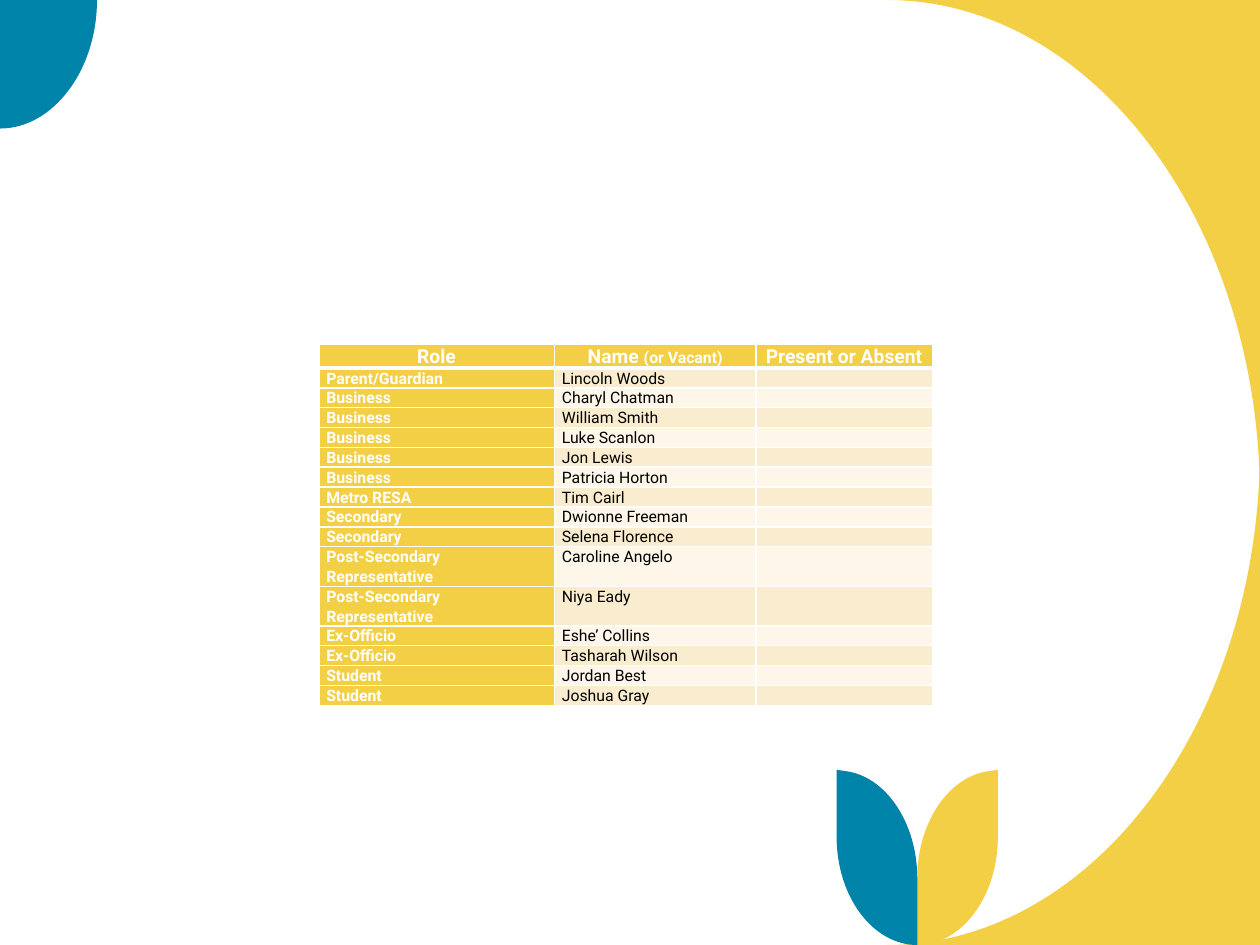
from lxml.etree import SubElement
from pptx import Presentation
from pptx.dml.color import RGBColor
from pptx.enum.text import MSO_ANCHOR as Anchor, PP_ALIGN as Align
from pptx.oxml import parse_xml
from pptx.oxml.ns import nsdecls, qn
from pptx.util import Inches, Pt

COLORS = {"gold": "F3CF45", "teal": "0083A9", "white": "FFFFFF",
          "black": "000000", "band_dark": "FAEDCF", "band_light": "FDF6E9"}
FONT = "Roboto"

# Content: header cells are lists of (text, size) runs
HEADERS = [[("Role", 11)], [("Name ", 11), ("(or Vacant)", 9)],
           [("Present or Absent", 11)]]
MEMBERS = [
    ("Parent/Guardian", "Lincoln Woods"),
    ("Business", "Charyl Chatman"),
    ("Business", "William Smith"),
    ("Business", "Luke Scanlon"),
    ("Business", "Jon Lewis"),
    ("Business", "Patricia Horton"),
    ("Metro RESA", "Tim Cairl"),
    ("Secondary", "Dwionne Freeman"),
    ("Secondary", "Selena Florence"),
    ("Post-Secondary Representative", "Caroline Angelo"),
    ("Post-Secondary Representative", "Niya Eady"),
    ("Ex-Officio", "Eshe’ Collins"),
    ("Ex-Officio", "Tasharah Wilson"),
    ("Student", "Jordan Best"),
    ("Student", "Joshua Gray"),
]
COLUMN_WIDTHS = [1.87, 1.6, 1.4]
HEADER_HEIGHT, ROW_HEIGHT = 0.18, 0.15

# Outlines: a pair is a line end, six numbers are a Bezier curve
TOP_SWEEP = [(10, 0), (7.04, 0), (8.67, 0, 10, 1.77, 10, 3.95)]
BOTTOM_SWEEP = [(10, 3.55), (10, 5.73, 8.67, 7.5, 7.04, 7.5), (10, 7.5)]
CORNER_LEAF = [(0, 0), (0.77, 0), (0.77, 0.56, 0.42, 1.02, 0, 1.02)]
LEAF_AXIS = 7.28
RIGHT_LEAF = [(7.92, 6.11), (7.92, 6.64),
              (7.92, 7.12, 7.63, 7.5, LEAF_AXIS, 7.5), (LEAF_AXIS, 6.97),
              (LEAF_AXIS, 6.53, 7.53, 6.16, 7.85, 6.12)]


def rgb(name):
    return RGBColor.from_string(COLORS[name])


def mirrored(outline, axis):
    return [tuple(2 * axis - v if i % 2 == 0 else v for i, v in enumerate(step))
            for step in outline]


def add_outline(shapes, outline, color):
    ends = [(Inches(step[-2]), Inches(step[-1])) for step in outline]
    builder = shapes.build_freeform(*ends[0])
    builder.add_line_segments(ends[1:], close=True)
    shape = builder.convert_to_shape()
    shape.shadow.inherit = False
    shape.fill.solid()
    shape.fill.fore_color.rgb = rgb(color)
    shape.line.fill.background()

    # Turn the straight segments of the curved steps into Bezier curves
    segments = list(shape._element.iter(qn("a:lnTo")))
    for segment, step in zip(segments, outline[1:]):
        if len(step) == 6:
            segment.tag = qn("a:cubicBezTo")
            controls = [(step[0], step[1]), (step[2], step[3])]
            for place, (x, y) in enumerate(controls):
                point = parse_xml(f'<a:pt {nsdecls("a")} x="{Inches(x) - shape.left}" '
                                  f'y="{Inches(y) - shape.top}"/>')
                segment.insert(place, point)


def write(paragraph, text, size=9, color="white", bold=True, align=Align.LEFT):
    paragraph.alignment = align
    paragraph.line_spacing = 1.07
    run = paragraph.add_run()
    run.text = text
    run.font.name = FONT
    run.font.size = Pt(size)
    run.font.bold = bold
    run.font.color.rgb = rgb(color)


def style_cell(cell, fill, anchor=Anchor.TOP, top=1, bottom=1):
    cell.margin_left = cell.margin_right = Inches(0.06)
    cell.margin_top = cell.margin_bottom = 0
    cell.vertical_anchor = anchor
    cell.fill.solid()
    cell.fill.fore_color.rgb = rgb(fill)
    borders = [("L", 1), ("R", 1), ("T", top), ("B", bottom)]
    for place, (side, width) in enumerate(borders):
        line = parse_xml(f'<a:ln{side} {nsdecls("a")} w="{Pt(width)}"><a:solidFill>'
                         f'<a:srgbClr val="{COLORS["white"]}"/>'
                         f'</a:solidFill></a:ln{side}>')
        cell._tc.get_or_add_tcPr().insert(place, line)


def keep_empty_cell_small(cell):
    end = cell.text_frame.paragraphs[0]._p.get_or_add_endParaRPr()
    end.set("sz", "900")
    SubElement(end, qn("a:latin"), typeface=FONT)


def add_roster(slide):
    height = HEADER_HEIGHT + ROW_HEIGHT * len(MEMBERS)
    roster = slide.shapes.add_table(
        len(MEMBERS) + 1, len(HEADERS), Inches(2.53), Inches(2.73),
        Inches(sum(COLUMN_WIDTHS)), Inches(height)).table
    for column, width in zip(roster.columns, COLUMN_WIDTHS):
        column.width = Inches(width)
    for index, row in enumerate(roster.rows):
        row.height = Inches(ROW_HEIGHT if index else HEADER_HEIGHT)

    # Header row
    for col, runs in enumerate(HEADERS):
        cell = roster.cell(0, col)
        style_cell(cell, "gold", anchor=Anchor.MIDDLE, bottom=3)
        for text, size in runs:
            write(cell.text_frame.paragraphs[0], text, size=size, align=Align.CENTER)

    # Member rows, banded from the second column on
    for index, (role, name) in enumerate(MEMBERS, start=1):
        band = "band_dark" if index % 2 else "band_light"
        role_cell, name_cell, present_cell = roster.rows[index].cells
        for cell, fill in ((role_cell, "gold"), (name_cell, band), (present_cell, band)):
            style_cell(cell, fill, top=3 if index == 1 else 1)
        write(role_cell.text_frame.paragraphs[0], role)
        write(name_cell.text_frame.paragraphs[0], name, color="black", bold=False)
        keep_empty_cell_small(present_cell)


def main():
    deck = Presentation()
    deck.slide_width, deck.slide_height = Inches(10), Inches(7.5)
    slide = deck.slides.add_slide(deck.slide_layouts[6])

    # Corner decoration
    for outline, color in [(TOP_SWEEP, "gold"), (BOTTOM_SWEEP, "gold"),
                           (CORNER_LEAF, "teal")]:
        add_outline(slide.shapes, outline, color)

    # Pair of leaves
    leaves = slide.shapes.add_group_shape()
    add_outline(leaves.shapes, RIGHT_LEAF, "gold")
    add_outline(leaves.shapes, mirrored(RIGHT_LEAF, LEAF_AXIS), "teal")

    add_roster(slide)
    deck.save("out.pptx")


if __name__ == "__main__":
    main()
